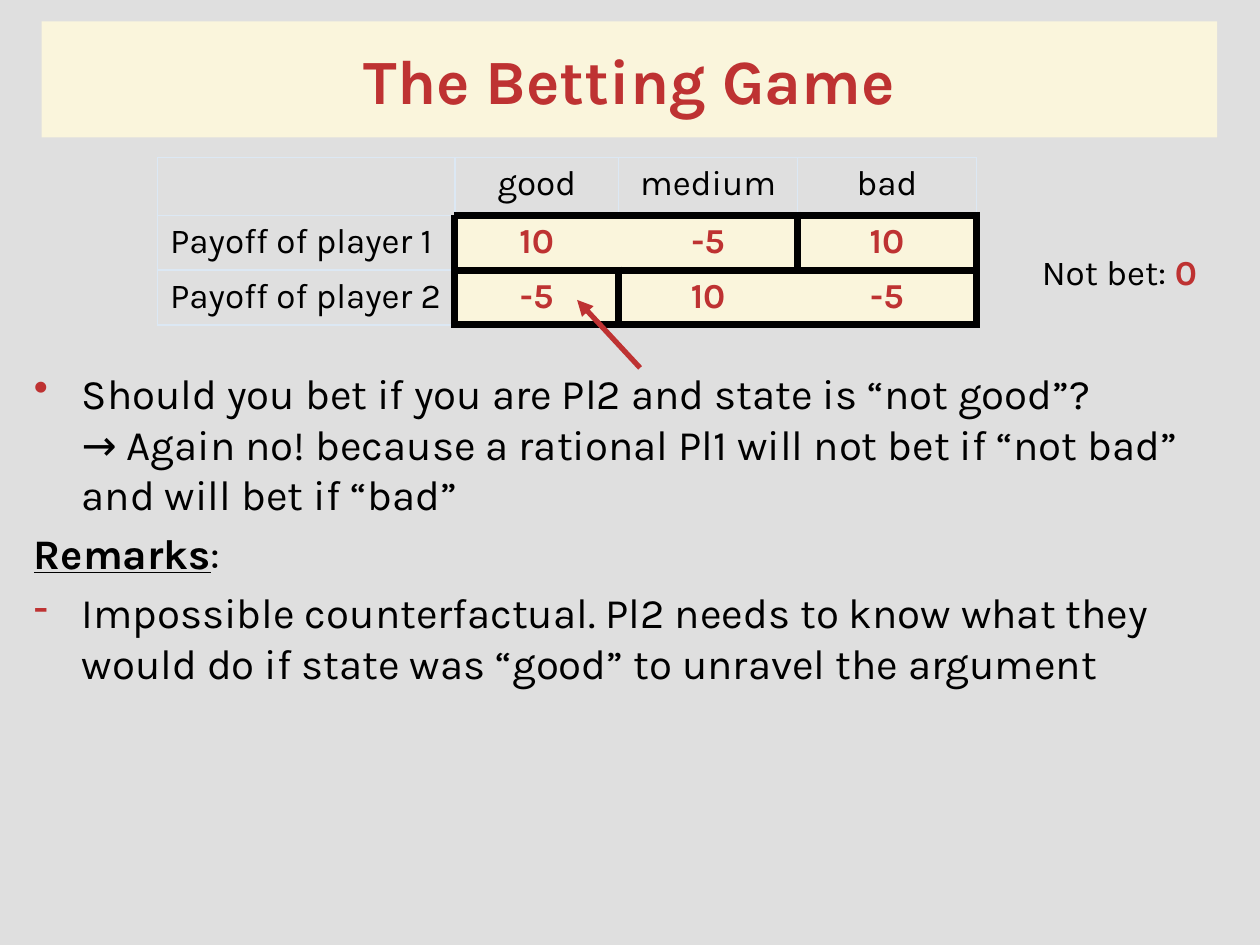
from typing import NamedTuple

from lxml.etree import SubElement
from pptx import Presentation
from pptx.dml.color import RGBColor
from pptx.enum.shapes import MSO_CONNECTOR, MSO_SHAPE
from pptx.enum.text import MSO_ANCHOR, PP_ALIGN
from pptx.oxml import parse_xml
from pptx.oxml.ns import nsdecls, qn
from pptx.util import Inches, Pt

FONT = "Karla"
RED, CREAM, GREY, BLACK, PALE_BLUE = "BE3232", "FAF5DC", "DFDFDF", "000000", "DCE8F4"

COLUMN_WIDTHS = [2.36, 1.3, 1.42, 1.42]
ROW_HEIGHTS = [0.46, 0.43, 0.43]
PAYOFFS = [
    ["", "good", "medium", "bad"],
    ["Payoff of player 1", "10", "-5", "10"],
    ["Payoff of player 2", "-5", "10", "-5"],
]


class InformationSet(NamedTuple):
    """States that one player cannot tell apart."""
    row: int
    first: int
    last: int


INFORMATION_SETS = [
    InformationSet(1, 1, 2), InformationSet(1, 3, 3),
    InformationSet(2, 1, 1), InformationSet(2, 2, 3),
]


class Item(NamedTuple):
    lines: list[str]
    bullet: str = ""
    heading: str = ""


BODY = [
    Item(["Should you bet if you are Pl2 and state is “not good”?",
          "→ Again no! because a rational Pl1 will not bet if “not bad” "
          "and will bet if “bad”"], bullet="•"),
    Item([":"], heading="Remarks"),
    Item(["Impossible counterfactual. Pl2 needs to know what they would do "
          "if state was “good” to unravel the argument"], bullet="-"),
]


def rgb(color: str) -> RGBColor:
    return RGBColor.from_string(color)


def paint(target, color: str) -> None:
    target.fill.solid()
    target.fill.fore_color.rgb = rgb(color)


def write(para, text: str, *, size: float = 20, color: str = BLACK,
          bold: bool = False, underline: bool = False) -> None:
    span = para.add_run()
    span.text = text
    font = span.font
    font.name, font.size, font.bold, font.underline = FONT, Pt(size), bold, underline
    font.color.rgb = rgb(color)


def add_text_box(page, left: float, top: float, width: float, height: float):
    box = page.shapes.add_textbox(Inches(left), Inches(top), Inches(width), Inches(height))
    box.text_frame.word_wrap = True
    return box.text_frame


def add_title(page) -> None:
    box = page.shapes.add_shape(MSO_SHAPE.RECTANGLE, Inches(0.33), Inches(0.17),
                                Inches(9.33), Inches(0.92))
    box.shadow.inherit = False
    box.line.fill.background()
    paint(box, CREAM)
    box.text_frame.vertical_anchor = MSO_ANCHOR.MIDDLE
    para = box.text_frame.paragraphs[0]
    para.alignment = PP_ALIGN.CENTER
    write(para, "The Betting Game", size=36, color=RED, bold=True)


def set_bullet(para, character: str) -> None:
    properties = para._p.get_or_add_pPr()
    properties.set("marL", str(Inches(0.38)))
    properties.set("indent", str(-Inches(0.38)))
    color = SubElement(properties, qn("a:buClr"))
    SubElement(color, qn("a:srgbClr"), val=RED)
    SubElement(properties, qn("a:buChar"), char=character)


def add_body(page) -> None:
    frame = add_text_box(page, 0.17, 2.87, 9.67, 4.46)
    for index, item in enumerate(BODY):
        para = frame.add_paragraph() if index else frame.paragraphs[0]
        para.space_before = Pt(5 if index else 0)
        if item.bullet:
            set_bullet(para, item.bullet)
        if item.heading:
            write(para, item.heading, size=24, bold=True, underline=True)
        for number, line in enumerate(item.lines):
            if number:
                para.add_line_break()
            write(para, line, size=24)


def information_set(row: int, column: int) -> InformationSet | None:
    return next((group for group in INFORMATION_SETS
                 if group.row == row and group.first <= column <= group.last), None)


def border(side: str, here: InformationSet | None, beyond: InformationSet | None):
    """Thick around an information set, none inside it, thin elsewhere."""
    if here and here == beyond:
        return parse_xml(f'<a:{side} {nsdecls("a")} w="0"><a:noFill/></a:{side}>')
    color, width = (BLACK, 4.5) if here or beyond else (PALE_BLUE, 1)
    return parse_xml(
        f'<a:{side} {nsdecls("a")} w="{Pt(width)}"><a:solidFill>'
        f'<a:srgbClr val="{color}"/></a:solidFill></a:{side}>')


def add_payoff_table(page) -> None:
    table = page.shapes.add_table(
        len(ROW_HEIGHTS), len(COLUMN_WIDTHS), Inches(1.25), Inches(1.25),
        Inches(sum(COLUMN_WIDTHS)), Inches(sum(ROW_HEIGHTS))).table
    table.first_row = table.horz_banding = False
    for column, width in zip(table.columns, COLUMN_WIDTHS):
        column.width = Inches(width)
    for row, height in zip(table.rows, ROW_HEIGHTS):
        row.height = Inches(height)
    for row, texts in enumerate(PAYOFFS):
        for column, text in enumerate(texts):
            cell = table.cell(row, column)
            here = information_set(row, column)
            paint(cell, CREAM if here else GREY)
            neighbours = {"lnL": (row, column - 1), "lnR": (row, column + 1),
                          "lnT": (row - 1, column), "lnB": (row + 1, column)}
            for index, (side, place) in enumerate(neighbours.items()):
                line = border(side, here, information_set(*place))
                cell._tc.get_or_add_tcPr().insert(index, line)
            para = cell.text_frame.paragraphs[0]
            para.alignment = PP_ALIGN.CENTER if column else PP_ALIGN.LEFT
            if text:
                write(para, text, color=RED if here else BLACK, bold=bool(here))


def add_not_bet_note(page) -> None:
    para = add_text_box(page, 8.17, 1.94, 1.5, 0.44).paragraphs[0]
    write(para, "Not bet: ")
    write(para, "0", color=RED, bold=True)


def add_arrow(page) -> None:
    arrow = page.shapes.add_connector(MSO_CONNECTOR.STRAIGHT, Inches(5.08), Inches(2.92),
                                      Inches(4.58), Inches(2.38))
    arrow.line.color.rgb = rgb(RED)
    arrow.line.width = Pt(3)
    SubElement(arrow.line._get_or_add_ln(), qn("a:tailEnd"), type="triangle")
    SubElement(arrow._element.spPr, qn("a:effectLst"))


def main() -> None:
    deck = Presentation()
    deck.slide_width, deck.slide_height = Inches(10), Inches(7.5)
    page = deck.slides.add_slide(deck.slide_layouts[6])
    paint(page.background, GREY)
    add_title(page)
    add_body(page)
    add_payoff_table(page)
    add_not_bet_note(page)
    add_arrow(page)
    deck.save("out.pptx")


if __name__ == "__main__":
    main()
